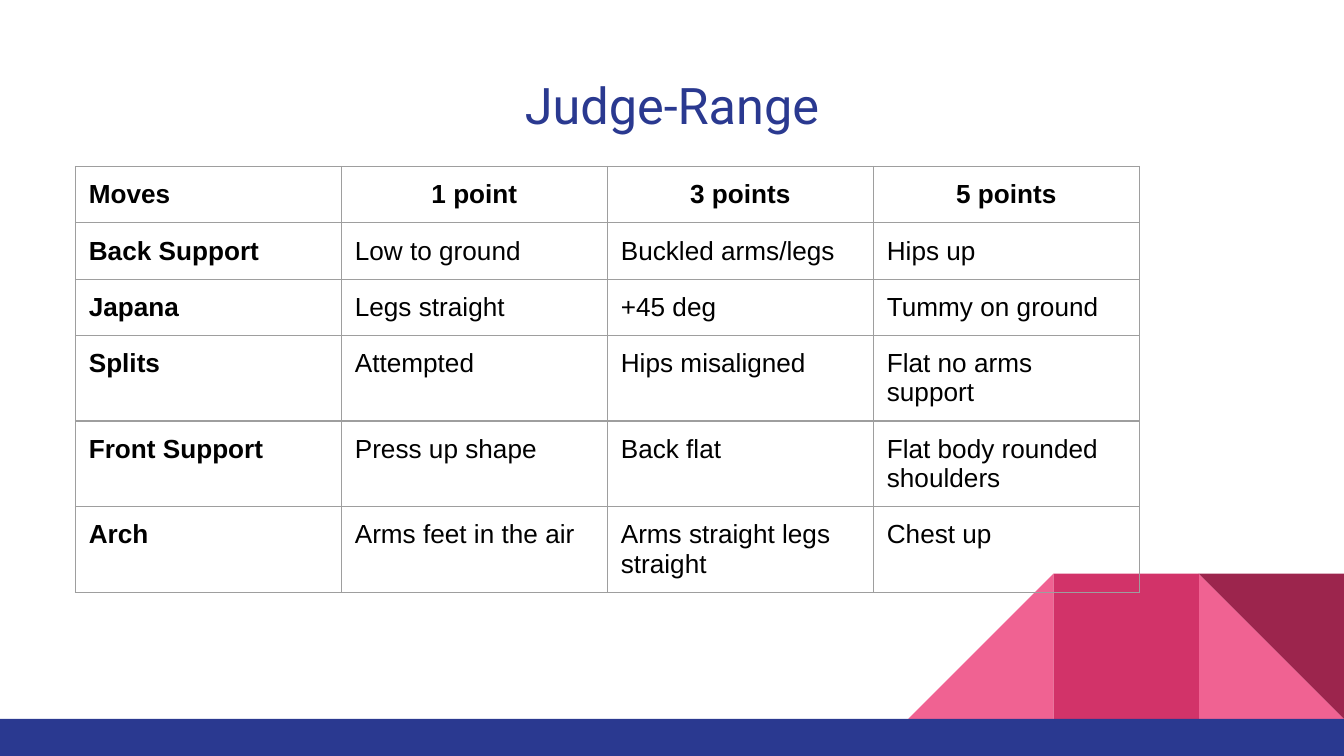
from lxml.etree import SubElement
from pptx import Presentation
from pptx.dml.color import RGBColor
from pptx.enum.shapes import MSO_SHAPE
from pptx.enum.text import MSO_ANCHOR, MSO_AUTO_SIZE, PP_ALIGN
from pptx.oxml.ns import qn
from pptx.util import Pt

NAVY = RGBColor(0x2A, 0x39, 0x90)
PINK = RGBColor(0xF0, 0x62, 0x92)
ROSE = RGBColor(0xD2, 0x33, 0x69)
BURGUNDY = RGBColor(0x9C, 0x25, 0x4D)
BLACK = RGBColor(0, 0, 0)
GREY = RGBColor(0x9E, 0x9E, 0x9E)

SLIDE_WIDTH, SLIDE_HEIGHT = 720, 405
BAND_TOP = 385.1
TILE = 77.8
INSET = 7.2

SCORES = [
    ["Moves", "1 point", "3 points", "5 points"],
    ["Back Support", "Low to ground", "Buckled arms/legs", "Hips up"],
    ["Japana", "Legs straight", "+45 deg", "Tummy on ground"],
    ["Splits", "Attempted", "Hips misaligned", "Flat no arms support"],
    ["Front Support", "Press up shape", "Back flat", "Flat body rounded shoulders"],
    ["Arch", "Arms feet in the air", "Arms straight legs straight", "Chest up"],
]


class SlideBuilder:
    title_font, title_size = "Roboto", 27
    body_font, body_size = "Arial", 14
    border_width = 0.75

    def __init__(self, slide):
        self.slide = slide

    def add_run(self, paragraph, text, font, size, color, bold=False):
        run = paragraph.add_run()
        run.text = text
        run.font.name = font
        run.font.size = Pt(size)
        run.font.bold = bold
        run.font.color.rgb = color

    def shape(self, kind, left, top, width, height, color, rotation=0, mirrored=False):
        shape = self.slide.shapes.add_shape(kind, Pt(left), Pt(top), Pt(width), Pt(height))
        shape.shadow.inherit = False
        shape.fill.solid()
        shape.fill.fore_color.rgb = color
        shape.line.fill.background()
        shape.rotation = rotation
        if mirrored:
            shape._element.spPr.find(qn("a:xfrm")).set("flipH", "1")

    def title(self, text, left, top, width, height):
        title = self.slide.shapes.title
        title.left, title.top = Pt(left), Pt(top)
        title.width, title.height = Pt(width), Pt(height)
        frame = title.text_frame
        frame.auto_size = MSO_AUTO_SIZE.NONE
        frame.word_wrap = True
        frame.vertical_anchor = MSO_ANCHOR.MIDDLE
        frame.margin_left = frame.margin_right = Pt(INSET)
        frame.margin_top = frame.margin_bottom = Pt(INSET)
        paragraph = frame.paragraphs[0]
        paragraph.alignment = PP_ALIGN.CENTER
        self.add_run(paragraph, text, self.title_font, self.title_size, NAVY)

    def table(self, rows, left, top, column_width, row_height):
        """Add a bordered table with a bold first row and first column."""
        row_count, column_count = len(rows), len(rows[0])
        table = self.slide.shapes.add_table(
            row_count, column_count, Pt(left), Pt(top),
            Pt(column_width * column_count), Pt(row_height * row_count)).table
        table.first_row = table.horz_banding = False
        for column in table.columns:
            column.width = Pt(column_width)
        for row_index, texts in enumerate(rows):
            table.rows[row_index].height = Pt(row_height)
            for column_index, text in enumerate(texts):
                cell = table.cell(row_index, column_index)
                self.border(cell)
                cell.fill.background()
                cell.margin_left = cell.margin_right = Pt(INSET)
                cell.margin_top = cell.margin_bottom = Pt(INSET)
                paragraph = cell.text_frame.paragraphs[0]
                is_point_heading = row_index == 0 and column_index > 0
                paragraph.alignment = PP_ALIGN.CENTER if is_point_heading else PP_ALIGN.LEFT
                self.add_run(paragraph, text, self.body_font, self.body_size, BLACK,
                             bold=row_index == 0 or column_index == 0)

    def border(self, cell):
        properties = cell._tc.get_or_add_tcPr()
        for side in ("a:lnL", "a:lnR", "a:lnT", "a:lnB"):
            line = SubElement(properties, qn(side), w=str(Pt(self.border_width)))
            fill = SubElement(line, qn("a:solidFill"))
            SubElement(fill, qn("a:srgbClr"), val=str(GREY))


def main():
    presentation = Presentation()
    presentation.slide_width = Pt(SLIDE_WIDTH)
    presentation.slide_height = Pt(SLIDE_HEIGHT)
    title_only = presentation.slide_layouts[5]
    builder = SlideBuilder(presentation.slides.add_slide(title_only))

    triangle, rectangle = MSO_SHAPE.RIGHT_TRIANGLE, MSO_SHAPE.RECTANGLE
    tiles = [  # kind, tiles from the right edge, colour, rotation, mirrored
        (triangle, 1, PINK, 0, False),
        (triangle, 3, PINK, 0, True),
        (rectangle, 2, ROSE, 0, False),
        (triangle, 1, BURGUNDY, 180, False),
    ]
    for kind, position, color, rotation, mirrored in tiles:
        builder.shape(kind, SLIDE_WIDTH - position * TILE, BAND_TOP - TILE,
                      TILE, TILE, color, rotation, mirrored)
    builder.shape(rectangle, 0, BAND_TOP, SLIDE_WIDTH, SLIDE_HEIGHT - BAND_TOP, NAVY)

    builder.title("Judge-Range", 24.5, 32.4, 671, 47.5)
    builder.table(SCORES, 40.4, 89.2, 142.5, 30)
    presentation.save("out.pptx")


if __name__ == "__main__":
    main()
